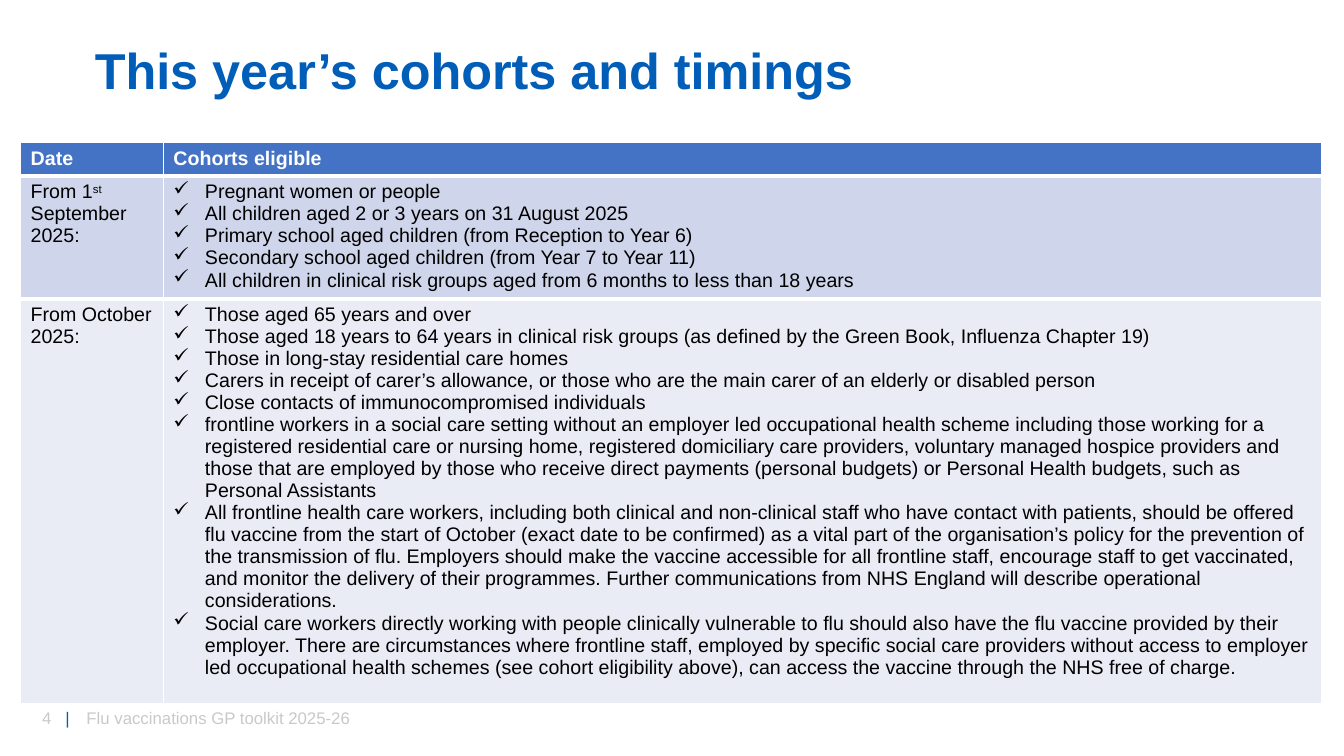
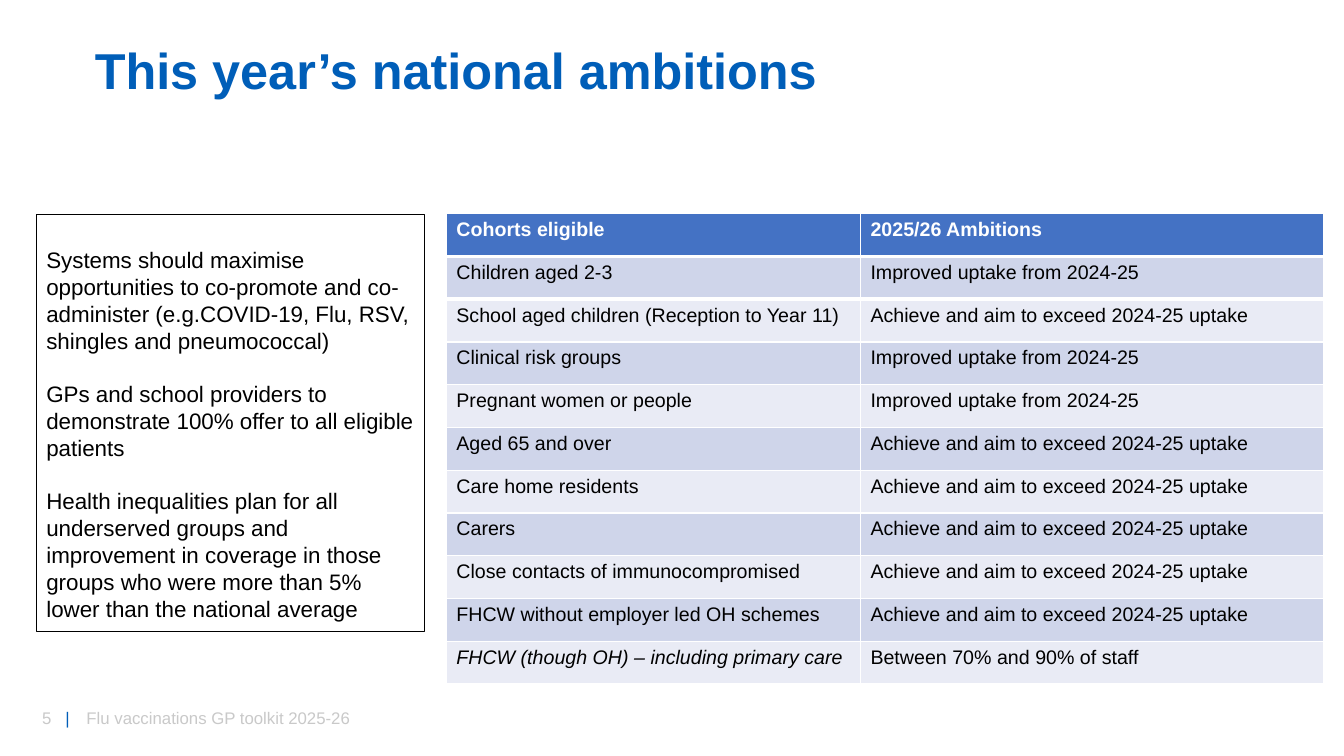
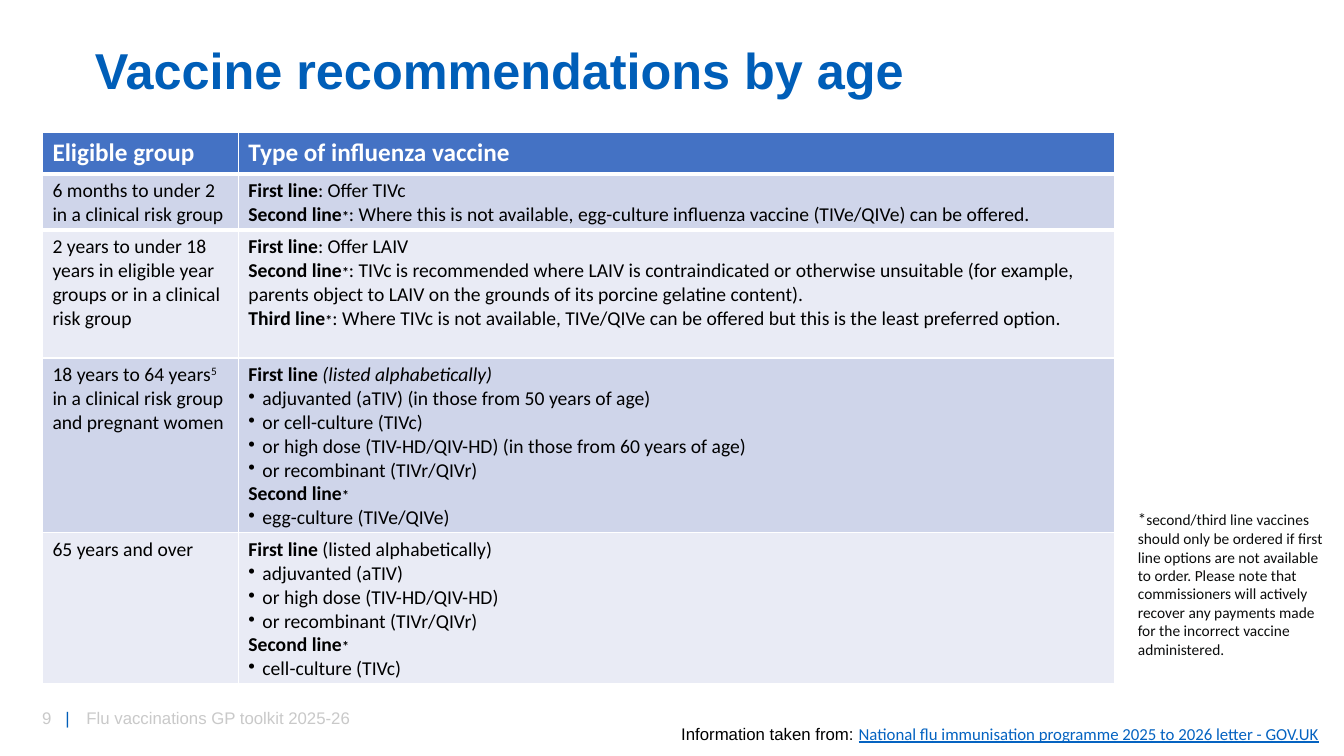
from lxml import etree
from pptx import Presentation
from pptx.dml.color import RGBColor
from pptx.enum import shapes, text
from pptx.oxml.ns import qn
from pptx.util import Pt

COLOURS = {
    "brand": "005EB8",
    "footer": "C9C9C9",
    "header": "4472C4",
    "band_dark": "CFD5EA",
    "band_light": "E9EBF5",
    "link": "0563C1",
    "note": "0B0C0C",
    "black": "000000",
    "white": "FFFFFF",
}
BULLET_INDENTS = {"✓": 22.5, "•": 10}
TITLE_BOX = (60.5, 28, 838, 48.5)
BOLD = {"bold": True}
SMALL_STAR = ("*", {"bold": True, "size": 10})
SUPERSCRIPT = {"raised": True}


def colour(name):
    return RGBColor.from_string(COLOURS[name])


def set_bullet(paragraph, char):
    indent = Pt(BULLET_INDENTS[char])
    properties = paragraph._p.get_or_add_pPr()
    properties.set("marL", str(indent))
    properties.set("indent", str(-indent))
    etree.SubElement(properties, qn("a:buChar"), char=char)


def set_tab(paragraph, position):
    tabs = etree.SubElement(paragraph._p.get_or_add_pPr(), qn("a:tabLst"))
    etree.SubElement(tabs, qn("a:tab"), pos=str(Pt(position)), algn="l")


def add_run(paragraph, words, size=14, font="Arial", fill="black", bold=False,
            italic=False, underline=False, raised=False):
    run = paragraph.add_run()
    run.text = words
    run.font.size = Pt(size)
    run.font.name = font
    run.font.color.rgb = colour(fill)
    run.font.bold = bold
    run.font.italic = italic
    run.font.underline = underline
    if raised:
        run._r.get_or_add_rPr().set("baseline", "30000")


def write(frame, lines, gap=0, tab=None, line_spacing=None, **style):
    """Fill a frame; a line is a string or a list of strings and (text, style) runs.

    A line that starts with a bullet sign becomes a bulleted paragraph.
    """
    frame.word_wrap = True
    for number, line in enumerate([lines] if isinstance(lines, str) else lines):
        paragraph = frame.add_paragraph() if number else frame.paragraphs[0]
        paragraph.alignment = text.PP_ALIGN.LEFT
        if number and gap:
            paragraph.space_before = Pt(gap)
        if line_spacing:
            paragraph.line_spacing = line_spacing
        runs = [line] if isinstance(line, str) else line
        if isinstance(line, str) and line[0] in BULLET_INDENTS:
            set_bullet(paragraph, line[0])
            runs = [line[2:]]
        if tab:
            set_tab(paragraph, tab)
        for run in runs:
            words, changes = (run, {}) if isinstance(run, str) else run
            add_run(paragraph, words, **{**style, **changes})


def add_textbox(slide, box, lines, anchor=text.MSO_ANCHOR.TOP, **style):
    frame = slide.shapes.add_textbox(*map(Pt, box)).text_frame
    frame.vertical_anchor = anchor
    write(frame, lines, **style)


def add_titled_slide(deck, heading, page):
    """Add a slide with its title, page number and footer."""
    slide = deck.slides.add_slide(deck.slide_layouts[5])
    title = slide.shapes.title
    title.left, title.top, title.width, title.height = map(Pt, TITLE_BOX)
    title.text_frame.auto_size = text.MSO_AUTO_SIZE.NONE
    title.text_frame.vertical_anchor = text.MSO_ANCHOR.MIDDLE
    write(title.text_frame, heading, line_spacing=0.9, size=36, fill="brand", bold=True)
    add_textbox(slide, (23, 502, 51, 21.5), [[f"{page}\t", ("|", {"fill": "brand"})]],
                tab=16.7, size=12, fill="footer")
    add_textbox(slide, (54.7, 498.6, 451, 28.8), "Flu vaccinations GP toolkit 2025-26",
                anchor=text.MSO_ANCHOR.MIDDLE, size=12, fill="footer")
    return slide


def set_white_border(cell, edge, width):
    border = etree.Element(qn(f"a:{edge}"), w=str(Pt(width)))
    fill = etree.SubElement(border, qn("a:solidFill"))
    etree.SubElement(fill, qn("a:srgbClr"), val=COLOURS["white"])
    cell._tc.get_or_add_tcPr().insert(0, border)


def add_banded_table(slide, corner, widths, heights, rows, header_size=14,
                     bottom_margin=3.6, font="Arial"):
    table = slide.shapes.add_table(
        len(rows), len(widths), *map(Pt, (*corner, sum(widths), sum(heights)))).table
    for column, width in zip(table.columns, widths):
        column.width = Pt(width)
    for r, (height, contents) in enumerate(zip(heights, rows)):
        table.rows[r].height = Pt(height)
        band = "band_dark" if r % 2 else "band_light"
        for c, content in enumerate(contents):
            cell = table.cell(r, c)
            cell.fill.solid()
            cell.fill.fore_color.rgb = colour(band if r else "header")
            if r < 2:
                set_white_border(cell, "lnT" if r else "lnB", 3)
            if r:
                cell.margin_bottom = Pt(bottom_margin)
                write(cell.text_frame, content, font=font)
            else:
                write(cell.text_frame, content, font=font, size=header_size,
                      fill="white", bold=True)


def add_outlined_box(slide, box, lines):
    shape = slide.shapes.add_shape(shapes.MSO_SHAPE.RECTANGLE, *map(Pt, box))
    shape.shadow.inherit = False
    shape.fill.background()
    shape.line.color.rgb = colour("black")
    shape.line.width = Pt(0.5)
    frame = shape.text_frame
    frame.vertical_anchor = text.MSO_ANCHOR.TOP
    frame.margin_top = Pt(23)
    write(frame, lines, gap=19, size=16)


def build_cohorts(deck):
    slide = add_titled_slide(deck, "This year’s cohorts and timings", 4)
    september = [
        "✓ Pregnant women or people",
        "✓ All children aged 2 or 3 years on 31 August 2025",
        "✓ Primary school aged children (from Reception to Year 6)",
        "✓ Secondary school aged children (from Year 7 to Year 11)",
        "✓ All children in clinical risk groups aged from 6 months to less than 18 years",
    ]
    october = [
        "✓ Those aged 65 years and over",
        "✓ Those aged 18 years to 64 years in clinical risk groups (as defined by the "
        "Green Book, Influenza Chapter 19)",
        "✓ Those in long-stay residential care homes",
        "✓ Carers in receipt of carer’s allowance, or those who are the main carer of an "
        "elderly or disabled person",
        "✓ Close contacts of immunocompromised individuals",
        "✓ frontline workers in a social care setting without an employer led occupational "
        "health scheme including those working for a registered residential care or nursing "
        "home, registered domiciliary care providers, voluntary managed hospice providers and "
        "those that are employed by those who receive direct payments (personal budgets) or "
        "Personal Health budgets, such as Personal Assistants",
        "✓ All frontline health care workers, including both clinical and non-clinical staff "
        "who have contact with patients, should be offered flu vaccine from the start of "
        "October (exact date to be confirmed) as a vital part of the organisation’s policy "
        "for the prevention of the transmission of flu. Employers should make the vaccine "
        "accessible for all frontline staff, encourage staff to get vaccinated, and monitor "
        "the delivery of their programmes. Further communications from NHS England will "
        "describe operational considerations.",
        "✓ Social care workers directly working with people clinically vulnerable to flu "
        "should also have the flu vaccine provided by their employer. There are circumstances "
        "where frontline staff, employed by specific social care providers without access to "
        "employer led occupational health schemes (see cohort eligibility above), can access "
        "the vaccine through the NHS free of charge.",
    ]
    rows = [
        ("Date", "Cohorts eligible"),
        ([["From 1", ("st", SUPERSCRIPT), " September 2025:"]], september),
        ("From October 2025:", october),
    ]
    add_banded_table(slide, (14.7, 101.7), (102, 827.5), (23.8, 87.6, 288.7), rows,
                     bottom_margin=0)


def build_ambitions(deck):
    slide = add_titled_slide(deck, "This year’s national ambitions", 5)
    add_outlined_box(slide, (26, 152.8, 277.3, 298), [
        "Systems should maximise opportunities to co-promote and co-administer "
        "(e.g.COVID-19, Flu, RSV, shingles and pneumococcal)",
        "GPs and school providers to demonstrate 100% offer to all eligible patients",
        "Health inequalities plan for all underserved groups and improvement in coverage in "
        "those groups who were more than 5% lower than the national average",
    ])
    improve = "Improved uptake from 2024-25"
    exceed = "Achieve and aim to exceed 2024-25 uptake"
    rows = [
        ("Cohorts eligible", "2025/26 Ambitions"),
        ("Children aged 2-3", improve),
        ("School aged children (Reception to Year 11)", exceed),
        ("Clinical risk groups", improve),
        ("Pregnant women or people", improve),
        ("Aged 65 and over", exceed),
        ("Care home residents", exceed),
        ("Carers", exceed),
        ("Close contacts of immunocompromised", exceed),
        ("FHCW without employer led OH schemes", exceed),
        ([[("FHCW (though OH) – including primary care", {"italic": True})]],
         "Between 70% and 90% of staff"),
    ]
    add_banded_table(slide, (318.8, 152.7), (295.8, 331), [30.54] * len(rows), rows)


def build_vaccines(deck):
    slide = add_titled_slide(deck, "Vaccine recommendations by age", 9)
    first, second, third = [(f"{rank} line", BOLD) for rank in ("First", "Second", "Third")]
    rows = [
        ("Eligible group", "Type of influenza vaccine"),
        ("6 months to under 2 in a clinical risk group", [
            [first, ": Offer TIVc"],
            [second, SMALL_STAR, ": Where this is not available, egg-culture influenza "
             "vaccine (TIVe/QIVe) can be offered."],
        ]),
        ("2 years to under 18 years in eligible year groups or in a clinical risk group", [
            [first, ": Offer LAIV"],
            [second, SMALL_STAR, ": TIVc is recommended where LAIV is contraindicated or "
             "otherwise unsuitable (for example, parents object to LAIV on the grounds of its "
             "porcine gelatine content)."],
            [third, SMALL_STAR, ": Where TIVc is not available, TIVe/QIVe can be offered but "
             "this is the least preferred option."],
        ]),
        ([["18 years to 64 years", ("5", SUPERSCRIPT),
           " in a clinical risk group and pregnant women"]], [
            [first, (" (listed alphabetically)", {"italic": True})],
            "• adjuvanted (aTIV) (in those from 50 years of age)",
            "• or cell-culture (TIVc)",
            "• or high dose (TIV-HD/QIV-HD) (in those from 60 years of age)",
            "• or recombinant (TIVr/QIVr)",
            [second, SMALL_STAR],
            "• egg-culture (TIVe/QIVe)",
        ]),
        ("65 years and over", [
            [first, " (listed alphabetically)"],
            "• adjuvanted (aTIV)",
            "• or high dose (TIV-HD/QIV-HD)",
            "• or recombinant (TIVr/QIVr)",
            [second, SMALL_STAR],
            "• cell-culture (TIVc)",
        ]),
    ]
    add_banded_table(slide, (30.3, 94.7), (140, 626), (29.5, 40, 91.5, 125, 108), rows,
                     header_size=18, bottom_margin=1.8, font="Calibri")
    add_textbox(slide, (805.7, 360, 154, 115), [[
        ("*", {"size": 12}),
        "second/third line vaccines should only be ordered if first line options are not "
        "available to order. Please note that commissioners will actively recover any "
        "payments made for the incorrect vaccine administered.",
    ]], size=11, font="Calibri", fill="note")
    add_textbox(slide, (479.5, 513.4, 480, 21.6), [[
        "Information taken from: ",
        ("National flu immunisation programme 2025 to 2026 letter - GOV.UK",
         {"font": "Calibri", "fill": "link", "underline": True}),
    ]], size=12)


def main():
    deck = Presentation()
    deck.slide_width, deck.slide_height = Pt(960), Pt(540)
    for build in (build_cohorts, build_ambitions, build_vaccines):
        build(deck)
    deck.save("out.pptx")


if __name__ == "__main__":
    main()
